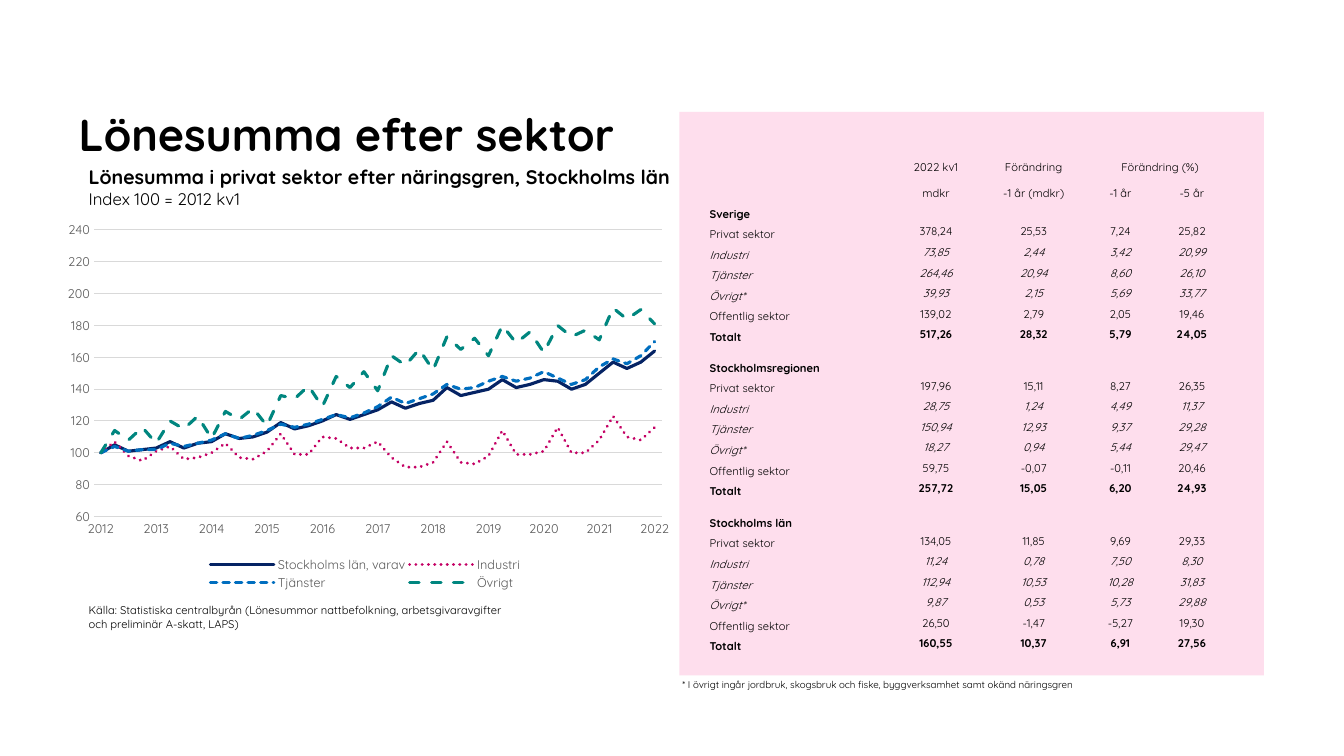
from lxml.etree import SubElement as Sub
from pptx import Presentation
from pptx.chart.data import CategoryChartData as ChartData
from pptx.dml.color import RGBColor as Rgb
from pptx.enum.chart import XL_CHART_TYPE as Kind, XL_LEGEND_POSITION as Side, XL_TICK_MARK as Tick
from pptx.enum.dml import MSO_LINE as Dash
from pptx.enum.shapes import MSO_SHAPE as Form
from pptx.enum.text import MSO_ANCHOR as Anchor, PP_ALIGN as Align
from pptx.oxml.ns import qn
from pptx.util import Pt

FACE = "Quicksand"
BLACK, GREY, RULE, PINK = "000000", "595959", "D9D9D9", "FEDEED"
PLAIN = "{2D5ABB26-0587-4C30-8999-92F81FD0307C}"

LINES = [
    ("Stockholms län, varav", "052364", Dash.SOLID,
     [100, 105, 101, 102, 103, 107, 103, 106, 107, 112, 109, 110, 113, 119,
      115, 117, 120, 124, 121, 124, 127, 132, 128, 131, 133, 141, 136, 138,
      140, 146, 141, 143, 146, 145, 140, 143, 150, 157, 153, 157, 164]),
    ("Industri", "C40064", Dash.ROUND_DOT,
     [100, 107, 98, 95, 101, 104, 96, 97, 100, 106, 97, 96, 101, 112,
      99, 99, 110, 109, 103, 103, 107, 97, 91, 91, 94, 107, 94, 93,
      98, 114, 99, 99, 101, 116, 100, 100, 108, 123, 110, 108, 116]),
    ("Tjänster", "006EBF", Dash.SQUARE_DOT,
     [100, 104, 101, 102, 102, 106, 104, 106, 108, 112, 109, 111, 114, 118,
      116, 118, 121, 124, 122, 125, 129, 135, 131, 134, 137, 143, 140, 141,
      145, 148, 145, 147, 151, 147, 143, 146, 154, 159, 156, 161, 170]),
    ("Övrigt", "00867F", Dash.DASH,
     [100, 114, 108, 116, 106, 120, 115, 123, 109, 126, 121, 128, 117, 136,
      134, 142, 129, 148, 141, 151, 139, 161, 155, 165, 152, 173, 165, 172,
      161, 180, 169, 176, 163, 180, 173, 177, 171, 191, 184, 190, 181]),
]

HEADS = [["", "2022 kv1", "Förändring", "Förändring (%)", ""],
         ["", "mdkr", "-1 år (mdkr)", "-1 år", "-5 år"]]
PARTS = ["Privat sektor", "Industri", "Tjänster", "Övrigt*", "Offentlig sektor", "Totalt"]
SUMS = {
    "Sverige": ["378,24 25,53 7,24 25,82", "73,85 2,44 3,42 20,99",
                "264,46 20,94 8,60 26,10", "39,93 2,15 5,69 33,77",
                "139,02 2,79 2,05 19,46", "517,26 28,32 5,79 24,05"],
    "Stockholmsregionen": ["197,96 15,11 8,27 26,35", "28,75 1,24 4,49 11,37",
                           "150,94 12,93 9,37 29,28", "18,27 0,94 5,44 29,47",
                           "59,75 -0,07 -0,11 20,46", "257,72 15,05 6,20 24,93"],
    "Stockholms län": ["134,05 11,85 9,69 29,33", "11,24 0,78 7,50 8,30",
                       "112,94 10,53 10,28 31,83", "9,87 0,53 5,73 29,88",
                       "26,50 -1,47 -5,27 19,30", "160,55 10,37 6,91 27,56"],
}


def tint(code):
    return Rgb.from_string(code)


def style(font, size, code=BLACK, bold=False, slant=False):
    font.name, font.size = FACE, Pt(size)
    font.bold, font.italic = bold, slant
    font.color.rgb = tint(code)


def write(slide, box, text, size, bold=False, inset=None, anchor=Anchor.TOP):
    frame = slide.shapes.add_textbox(*map(Pt, box)).text_frame
    frame.word_wrap = True
    frame.vertical_anchor = anchor
    if inset is not None:
        frame.margin_left = frame.margin_right = Pt(inset)
        frame.margin_top = frame.margin_bottom = Pt(inset)
    para = frame.paragraphs[0]
    para.text = text
    style(para.font, size, bold=bold)
    return para


def draw_chart(slide, box):
    data = ChartData(number_format="0")
    count = len(LINES[0][3])
    data.categories = ["" if i % 4 else str(2012 + i // 4) for i in range(count)]
    for name, _, _, vals in LINES:
        data.add_series(name, vals)
    chart = slide.shapes.add_chart(Kind.LINE, *map(Pt, box), data).chart
    style(chart.font, 10)
    chart.has_title = False
    chart.plots[0].vary_by_categories = False
    for line, (_, code, dash, _) in zip(chart.plots[0].series, LINES):
        line.smooth = False
        line.marker.style = None
        pen = line.format.line
        pen.width, pen.dash_style = Pt(2.25), dash
        pen.color.rgb = tint(code)
        line._element.find(".//" + qn("a:ln")).set("cap", "rnd")
        mark = line._element.find(qn("c:marker"))
        if mark is None:
            mark = line._element.get_or_add_marker()
        for kid in list(mark):
            mark.remove(kid)
        Sub(mark, qn("c:symbol"), val="none")
    years, scale = chart.category_axis, chart.value_axis
    for axis in (years, scale):
        axis.major_tick_mark = axis.minor_tick_mark = Tick.NONE
        style(axis.tick_labels.font, 9, GREY)
    scale.minimum_scale, scale.maximum_scale, scale.major_unit = 60, 240, 20
    scale.format.line.fill.background()
    for pen in (years.format.line, scale.major_gridlines.format.line):
        pen.width = Pt(0.75)
        pen.color.rgb = tint(RULE)
    skip = years._element.makeelement(qn("c:tickLblSkip"), {"val": "4"})
    years._element.find(qn("c:noMultiLvlLbl")).addprevious(skip)
    chart.has_legend = True
    chart.legend.position = Side.BOTTOM
    chart.legend.include_in_layout = False
    style(chart.legend.font, 9, GREY)
    area = chart._chartSpace.find(".//" + qn("c:plotArea"))
    place(area, 0.06, 0.04, 0.91, 0.75, True)
    place(chart.legend._element, 0.24, 0.89, 0.51, 0.1)


def place(node, left, top, width, height, inner=False):
    old = node.find(qn("c:layout"))
    if old is not None:
        node.remove(old)
    lay = node.makeelement(qn("c:layout"), {})
    if inner:
        node.insert(0, lay)
    else:
        node.find(qn("c:legendPos")).addnext(lay)
    hand = Sub(lay, qn("c:manualLayout"))
    if inner:
        Sub(hand, qn("c:layoutTarget"), val="inner")
    for key in ("xMode", "yMode"):
        Sub(hand, qn("c:" + key), val="edge")
    for key, val in zip("xywh", (left, top, width, height)):
        Sub(hand, qn("c:" + key), val=str(val))


def fill_cell(cell, text, first, bold, slant, low):
    cell.fill.background()
    cell.margin_left = cell.margin_right = cell.margin_top = Pt(0.7)
    cell.margin_bottom = 0
    cell.vertical_anchor = Anchor.BOTTOM if low else Anchor.MIDDLE
    para = cell.text_frame.paragraphs[0]
    if not text:
        Sub(para._p, qn("a:endParaRPr"), sz="800")
        return
    para.text = text
    para.alignment = Align.LEFT if first else Align.CENTER
    style(para.font, 8, bold=bold, slant=slant)


def draw_table(slide, box):
    rows = list(HEADS)
    for name, sums in SUMS.items():
        rows.append([name, "", "", "", ""])
        rows += [[part, *vals.split()] for part, vals in zip(PARTS, sums)]
    grid = slide.shapes.add_table(len(rows), 5, *map(Pt, box)).table
    grid.first_row = grid.horz_banding = False
    grid._tbl.tblPr.find(qn("a:tableStyleId")).text = PLAIN
    for col, part in zip(grid.columns, (1.83, 0.85, 1.09, 0.63, 0.79)):
        col.width = Pt(round(box[2] * part / 5.19, 2))
    tall = {0: 23, 1: 18.7, 9: 22, 16: 22.7}
    for i, row in enumerate(rows):
        grid.rows[i].height = Pt(tall.get(i, 14.7))
        bold = row[0] in SUMS or row[0] == "Totalt"
        slant = row[0] in PARTS[1:4]
        for j, text in enumerate(row):
            fill_cell(grid.cell(i, j), text, j == 0, bold, slant, j == 0 or i < 2)
    grid.cell(0, 3).merge(grid.cell(0, 4))


def draw_left(slide, box):
    left, top, width, _ = box
    write(slide, (left, top, 663.8, 87.8), "Lönesumma efter sektor", 32, True, 0, Anchor.BOTTOM)
    para = write(slide, (left, top + 87.9, width, 38.9),
                 "Lönesumma i privat sektor efter näringsgren, Stockholms län", 14)
    para.runs[0].font.bold = True
    para.add_line_break()
    run = para.add_run()
    run.text = "Index 100 = 2012 kv1"
    run.font.size = Pt(12)
    draw_chart(slide, (left - 15.9, top + 126.8, 445.7, 272.9))
    write(slide, (left, top + 401.1, 317.5, 26.6),
          "Källa: Statistiska centralbyrån (Lönesummor nattbefolkning, "
          "arbetsgivaravgifter och preliminär A-skatt, LAPS)", 8)


def draw_right(slide, box):
    left, top, _, height = box
    panel = slide.shapes.add_shape(Form.RECTANGLE, *map(Pt, box))
    panel.shadow.inherit = False
    panel.fill.solid()
    panel.fill.fore_color.rgb = tint(PINK)
    panel.line.fill.background()
    draw_table(slide, (left + 20.9, top + 21.6, 373.7, 365.7))
    write(slide, (left - 5, top + height - 1.5, 309.6, 15.8),
          "* I övrigt ingår jordbruk, skogsbruk och fiske, "
          "byggverksamhet samt okänd näringsgren", 7)


def main():
    deck = Presentation()
    deck.slide_width, deck.slide_height = Pt(960), Pt(540)
    slide = deck.slides.add_slide(deck.slide_layouts[6])
    draw_left(slide, (56.2, 26.6, 438.5, 427.7))
    draw_right(slide, (485.3, 79.9, 417.6, 402.5))
    deck.save("out.pptx")


if __name__ == "__main__":
    main()
